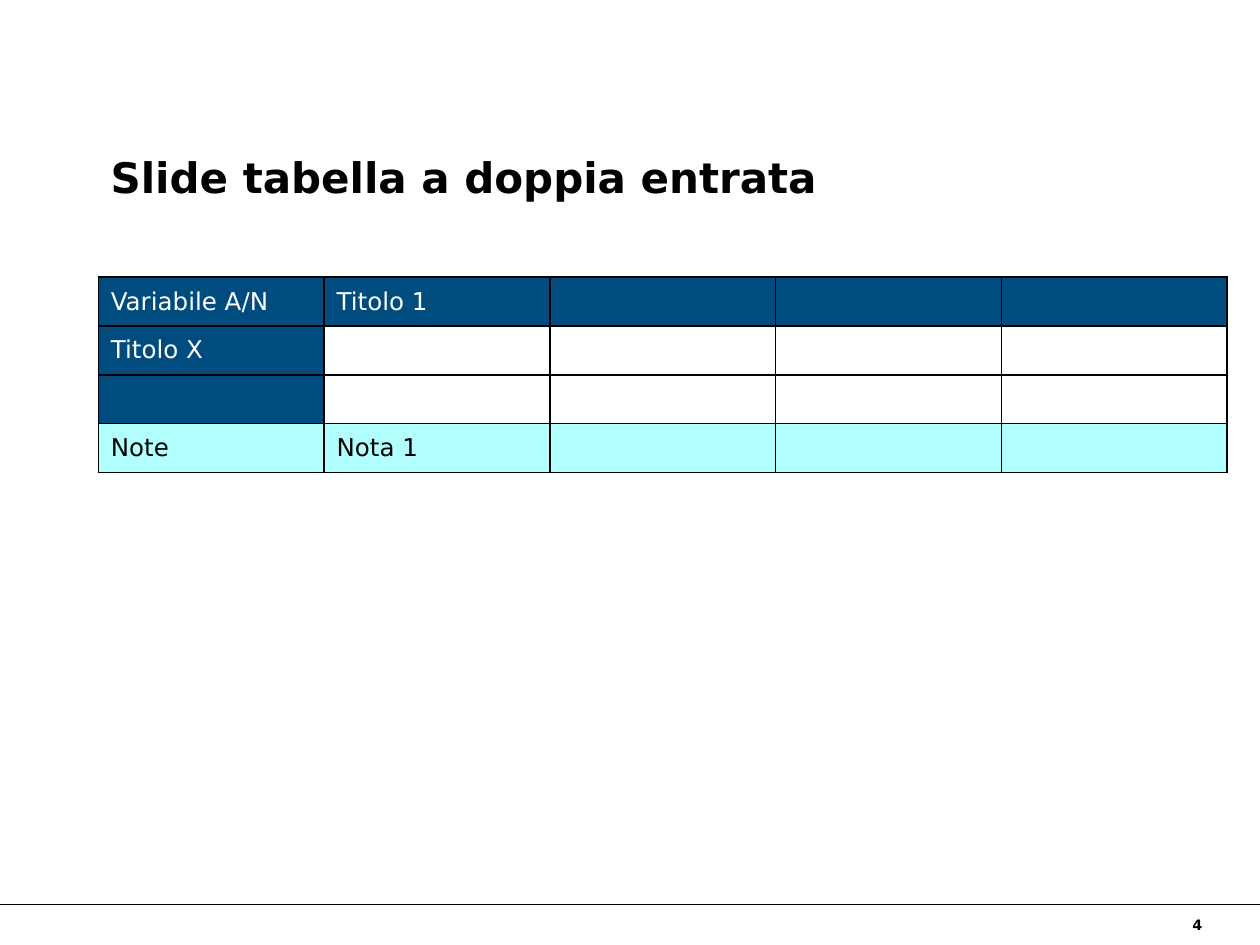
import pptx
import pptx.dml.color
import pptx.enum.shapes
import pptx.enum.text
import pptx.oxml
import pptx.oxml.ns
import pptx.util
from pptx.util import Inches, Pt

RGBColor = pptx.dml.color.RGBColor
PP_ALIGN = pptx.enum.text.PP_ALIGN
MSO_ANCHOR = pptx.enum.text.MSO_ANCHOR

FONT = "DejaVu Sans"
BLACK = RGBColor(0x00, 0x00, 0x00)
WHITE = RGBColor(0xFE, 0xFF, 0xFF)
NAVY = RGBColor(0x00, 0x4C, 0x7E)
AQUA = RGBColor(0xB2, 0xFF, 0xFF)

TITLE = "Slide tabella a doppia entrata"
PAGE_NUMBER = "4"
ROWS = [
    ["Variabile A/N", "Titolo 1", "", "", ""],
    ["Titolo X", "", "", "", ""],
    ["", "", "", "", ""],
    ["Note", "Nota 1", "", "", ""],
]

LEFT, WIDTH = 0.78, 8.96
TABLE_TOP, TABLE_HEIGHT = 2.2, 1.55
FOOTER_TOP = 7.18


def style_text(paragraph, size, color, bold=False):
    for run in paragraph.runs:
        run.font.name = FONT
        run.font.size = Pt(size)
        run.font.bold = bold
        run.font.color.rgb = color


def add_label(slide, text, box, size):
    label = slide.shapes.add_textbox(*map(Inches, box))
    frame = label.text_frame
    frame.word_wrap = True
    frame.text = text
    style_text(frame.paragraphs[0], size, BLACK, bold=True)
    return frame


def cell_colors(row, column):
    """Return the fill (None for an open cell) and the text colour."""
    if row == len(ROWS) - 1:
        return AQUA, BLACK
    if row == 0 or column == 0:
        return NAVY, WHITE
    return None, BLACK


def add_borders(cell):
    properties = cell._tc.get_or_add_tcPr()
    for position, side in enumerate(("lnL", "lnR", "lnT", "lnB")):
        border = pptx.oxml.parse_xml(
            f'<a:{side} {pptx.oxml.ns.nsdecls("a")} w="{Pt(1)}"><a:solidFill>'
            f'<a:srgbClr val="{BLACK}"/></a:solidFill></a:{side}>'
        )
        properties.insert(position, border)


def add_double_entry_table(slide):
    table = slide.shapes.add_table(
        len(ROWS), len(ROWS[0]), Inches(LEFT), Inches(TABLE_TOP),
        Inches(WIDTH), Inches(TABLE_HEIGHT),
    ).table
    table.first_row = False
    table.horz_banding = False
    for r, row in enumerate(ROWS):
        for c, text in enumerate(row):
            cell = table.cell(r, c)
            fill, color = cell_colors(r, c)
            if fill is None:
                cell.fill.background()
            else:
                cell.fill.solid()
                cell.fill.fore_color.rgb = fill
            cell.vertical_anchor = MSO_ANCHOR.MIDDLE
            cell.margin_top = cell.margin_bottom = Inches(0.03)
            cell.text_frame.text = text
            style_text(cell.text_frame.paragraphs[0], 14, color)
            add_borders(cell)


def add_footer(slide, slide_width):
    rule = slide.shapes.add_connector(
        pptx.enum.shapes.MSO_CONNECTOR.STRAIGHT,
        0, Inches(FOOTER_TOP), slide_width, Inches(FOOTER_TOP),
    )
    rule.line.color.rgb = BLACK
    rule.line.width = Pt(0.5)
    rule._element.spPr.append(pptx.oxml.parse_xml(
        f'<a:effectLst {pptx.oxml.ns.nsdecls("a")}/>'))
    number = add_label(slide, PAGE_NUMBER, (8.53, 7.22, 1.11, 0.24), 8.2)
    number.paragraphs[0].alignment = PP_ALIGN.RIGHT


def main():
    presentation = pptx.Presentation()
    presentation.slide_width = Inches(10)
    presentation.slide_height = Inches(7.5)
    slide = presentation.slides.add_slide(presentation.slide_layouts[6])
    slide.background.fill.solid()
    slide.background.fill.fore_color.rgb = WHITE

    add_footer(slide, presentation.slide_width)
    title = add_label(slide, TITLE, (LEFT, 1.04, WIDTH, 0.93), 24)
    title.margin_top = Inches(0.08)
    title.paragraphs[0].line_spacing = 1.2
    add_double_entry_table(slide)
    presentation.save("out.pptx")


if __name__ == "__main__":
    main()
